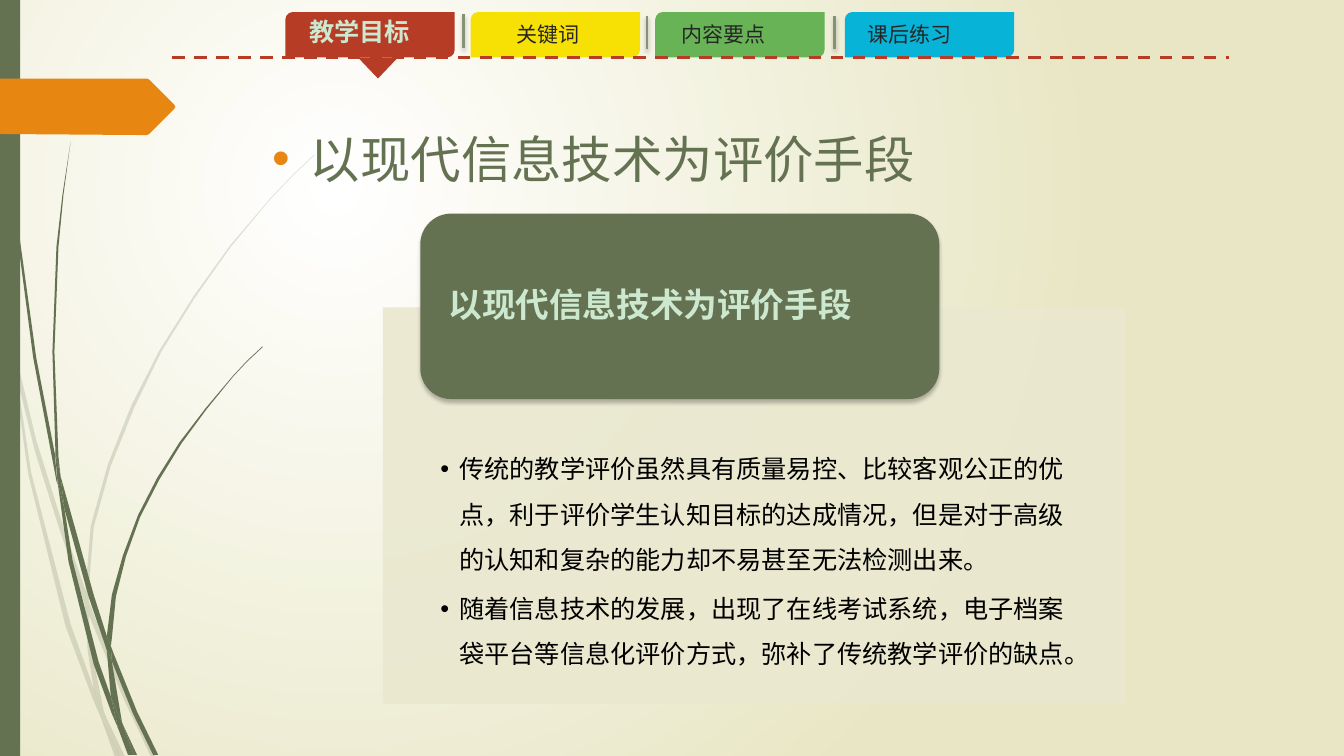
from dataclasses import dataclass

from lxml import etree
from pptx import Presentation
from pptx.dml.color import RGBColor
from pptx.enum import dml, lang, shapes, text
from pptx.oxml import ns
from pptx.util import Pt

OLIVE = RGBColor(0x64, 0x72, 0x52)
SAGE = RGBColor(0x84, 0x92, 0x76)
MINT = RGBColor(0xCC, 0xE8, 0xCF)
CREAM = RGBColor(0xEA, 0xE8, 0xCF)
SAND = RGBColor(0xE8, 0xE6, 0xC4)
WHITE = RGBColor(0xFF, 0xFF, 0xFF)
BLACK = RGBColor(0, 0, 0)
INK = RGBColor(0x26, 0x26, 0x26)
ORANGE = RGBColor(0xE7, 0x87, 0x12)
RED = RGBColor(0xB7, 0x3C, 0x26)
YELLOW = RGBColor(0xF7, 0xE0, 0x03)
GREEN = RGBColor(0x67, 0xB3, 0x55)
BLUE = RGBColor(0x07, 0xB4, 0xD7)
HEAD_FONT, BODY_FONT = "Noto Sans CJK SC", "TeX Gyre Adventor"
GRID = Pt(0.72)  # one unit of the outlines below
TOPIC = "以现代信息技术为评价手段"


@dataclass
class Tab:
    label: str
    fill: RGBColor
    left: float
    label_box: tuple[float, float, float, float]
    size: float = 15
    color: RGBColor = INK
    bold: bool = False


@dataclass
class Separator:
    x: float
    top: float
    bottom: float


TABS = [
    Tab("教学目标", RED, 203.8, (213.8, 7.9, 87.1, 28.8), 18, MINT, True),
    Tab("关键词", YELLOW, 336.2, (362.2, 11.5, 59.8, 25.2)),
    Tab("内容要点", GREEN, 468, (479.5, 11.5, 74.9, 25.2)),
    Tab("课后练习", BLUE, 603.4, (612.7, 11.5, 74.9, 25.2)),
]
SEPARATORS = [Separator(331.2, 10.1, 34.6), Separator(462.2, 11.5, 35.3),
              Separator(596.2, 11.5, 35.3)]
POINTS = [
    "传统的教学评价虽然具有质量易控、比较客观公正的优点，利于评价学生认知目标的达成情况，"
    "但是对于高级的认知和复杂的能力却不易甚至无法检测出来。",
    "随着信息技术的发展，出现了在线考试系统，电子档案袋平台等信息化评价方式，"
    "弥补了传统教学评价的缺点。",
]
PALE_GRASS = [
    [(11, 350), (9, 322), (0, 282), (0, 299), (10, 344)],
    [(58, 522), (84, 599), (85, 586), (62, 520), (36, 437), (14, 345), (17, 376), (35, 449)],
    [(92, 607), (88, 596), (88, 610), (123, 694), (150, 751), (155, 751), (127, 692)],
    [(119, 751), (124, 751), (105, 711)],
    [(93, 683), (70, 619), (31, 469), (17, 376), (11, 350), (28, 470), (65, 621), (92, 693),
     (101, 714), (99, 707)],
    [(84, 599), (87, 646), (93, 683), (96, 692), (105, 711), (103, 706), (91, 646), (88, 610),
     (88, 608)],
    [(88, 584), (93, 523), (110, 462), (133, 405), (160, 349), (193, 296), (229, 245),
     (268, 198), (290, 175), (312, 154), (312, 153), (289, 175), (268, 197), (228, 244),
     (192, 294), (158, 348), (130, 403), (107, 461), (90, 522), (85, 584), (85, 586), (88, 596)],
    [(101, 714), (114, 751), (119, 751)],
    [(88, 608), (88, 610), (88, 596), (85, 586), (84, 599)],
    [(96, 692), (93, 683), (99, 707), (101, 714), (119, 751), (105, 711)],
]
DARK_GRASS = [
    [(7, 110), (17, 233), (33, 355), (56, 477), (57, 481), (55, 457), (55, 453), (36, 355),
     (19, 232), (8, 109), (5, 48), (4, 0), (3, 0), (4, 48)],
    [(88, 592), (106, 645), (106, 633), (106, 631), (93, 590), (60, 472), (64, 505)],
    [(113, 649), (110, 641), (111, 656), (132, 708), (152, 749), (157, 749), (136, 706)],
    [(110, 691), (98, 657), (72, 556), (64, 505), (57, 477), (68, 557), (93, 659), (111, 708),
     (117, 722), (116, 717)],
    [(60, 472), (58, 453), (54, 349), (58, 245), (63, 193), (70, 141), (62, 193), (56, 245),
     (52, 349), (55, 449)],
    [(133, 749), (136, 749), (122, 719)],
    [(57, 477), (64, 505), (60, 472), (55, 449), (55, 453)],
    [(111, 633), (115, 592), (125, 552), (139, 513), (158, 476), (180, 440), (205, 406),
     (231, 374), (245, 359), (261, 344), (260, 344), (245, 358), (231, 373), (204, 405),
     (178, 439), (156, 474), (137, 511), (122, 551), (111, 590), (106, 631), (110, 641)],
    [(117, 722), (127, 749), (131, 749)],
    [(106, 645), (110, 691), (116, 706), (122, 719), (121, 716), (111, 656), (109, 651)],
    [(106, 645), (109, 651), (111, 656), (110, 641), (106, 631), (106, 633)],
    [(116, 706), (110, 691), (116, 717), (117, 722), (130, 749), (133, 749), (122, 719)],
]
PENNANT = [(173, 108), (148, 133), (146, 134), (136, 134), (0, 133), (0, 78), (146, 78),
           (148, 79), (173, 104), (174, 106)]


def add_xml(parent, tag: str, **attrs):
    return etree.SubElement(parent, ns.qn(tag), {k: str(v) for k, v in attrs.items()})


def paint(sp, color: RGBColor, opacity: int = 100) -> None:
    sp.shadow.inherit = False
    sp.fill.solid()
    sp.fill.fore_color.rgb = color
    sp.line.fill.background()
    if opacity < 100:
        clr = sp.element.spPr.find(".//" + ns.qn("a:srgbClr"))
        add_xml(clr, "a:alpha", val=opacity * 1000)


def add_soft_shadow(effects) -> None:
    shadow = add_xml(effects, "a:outerShdw", blurRad=Pt(3), dist=Pt(2), dir=5400000,
                     algn="ctr", rotWithShape=0)
    add_xml(add_xml(shadow, "a:srgbClr", val="000000"), "a:alpha", val=25000)


def add_outline(parent, points: list[tuple[int, int]], color: RGBColor, opacity: int = 100) -> None:
    builder = parent.build_freeform(*points[0], scale=GRID)
    builder.add_line_segments(points[1:], close=True)
    paint(builder.convert_to_shape(), color, opacity)


def add_block(kind, box: tuple[float, ...], color: RGBColor, opacity: int = 100):
    sp = s.shapes.add_shape(kind, *map(Pt, box))
    paint(sp, color, opacity)
    return sp


def add_rule(x1: float, y1: float, x2: float, y2: float, color: RGBColor, width: float):
    ln = s.shapes.add_connector(shapes.MSO_CONNECTOR.STRAIGHT, *map(Pt, (x1, y1, x2, y2)))
    ln.line.color.rgb = color
    ln.line.width = Pt(width)
    return ln, add_xml(ln.element.spPr, "a:effectLst")


def add_text_box(box: tuple[float, ...], margins: tuple[float, ...], wrap: bool = True):
    tf = s.shapes.add_textbox(*map(Pt, box)).text_frame
    tf.word_wrap = wrap
    tf.margin_left, tf.margin_top, tf.margin_right, tf.margin_bottom = map(Pt, margins)
    return tf


def add_run(p, words: str, size: float, color: RGBColor, font: str = HEAD_FONT,
            bold: bool = False) -> None:
    r = p.add_run()
    r.text = words
    r.font.size, r.font.name, r.font.bold = Pt(size), font, bold
    r.font.color.rgb = color
    r.font.language_id = lang.MSO_LANGUAGE_ID.SIMPLIFIED_CHINESE


def add_bullet(p, indent: float, color: RGBColor) -> None:
    pPr = p._p.get_or_add_pPr()
    pPr.set("marL", str(Pt(indent)))
    pPr.set("indent", str(-Pt(indent)))
    add_xml(add_xml(pPr, "a:buClr"), "a:srgbClr", val=color)
    add_xml(pPr, "a:buFont", typeface="Arial")
    add_xml(pPr, "a:buChar", char="•")


prs = Presentation()
prs.slide_width, prs.slide_height = Pt(960), Pt(540)
s = prs.slides.add_slide(prs.slide_layouts[5])

# Background: round glow towards the upper left
fill = s.background.fill
fill.gradient()
for stop, color, position in zip(fill.gradient_stops, (WHITE, SAND), (0, 1)):
    stop.color.rgb, stop.position = color, position
grad = s.element.find(".//" + ns.qn("a:gradFill"))
grad.remove(grad.find(ns.qn("a:lin")))
glow = add_xml(grad, "a:path", path="circle")
add_xml(glow, "a:fillToRect", l=50000, t=50000, r=100000, b=100000)

# Grass, side bar and pennant
for blades, opacity in ((PALE_GRASS, 20), (DARK_GRASS, 100)):
    grass = s.shapes.add_group_shape()
    for blade in blades:
        add_outline(grass.shapes, blade, OLIVE, opacity)
add_block(shapes.MSO_SHAPE.RECTANGLE, (0, 0, 14.4, 540), OLIVE)
add_outline(s.shapes, PENNANT, ORANGE)

# Navigation tabs
for tab in reversed(TABS):
    add_block(shapes.MSO_SHAPE.ROUND_2_DIAG_RECTANGLE, (tab.left, 8.6, 121, 32.4), tab.fill)
dashes, _ = add_rule(123.1, 41, 877.7, 41, RED, 2.25)
dashes.line.dash_style = dml.MSO_LINE.DASH
for tab in TABS:
    tf = add_text_box(tab.label_box, (7.2, 3.6, 7.2, 3.6), wrap=False)
    tf.auto_size = text.MSO_AUTO_SIZE.SHAPE_TO_FIT_TEXT
    add_run(tf.paragraphs[0], tab.label, tab.size, tab.color, bold=tab.bold)
for sep in SEPARATORS:
    _, effects = add_rule(sep.x, sep.top, sep.x, sep.bottom, SAGE, 1.75)
    add_soft_shadow(effects)
pointer = add_block(shapes.MSO_SHAPE.ISOSCELES_TRIANGLE, (255.6, 41, 28.8, 15.1), RED)
pointer.element.spPr.find(ns.qn("a:xfrm")).set("flipV", "1")

# Title, in front of the grass
title = s.shapes.title
title.element.getparent().append(title.element)
title.left, title.top, title.width, title.height = map(Pt, (187.2, 87.8, 526.3, 63.4))
tf = title.text_frame
tf.vertical_anchor, tf.auto_size = text.MSO_ANCHOR.TOP, text.MSO_AUTO_SIZE.NONE
p = tf.paragraphs[0]
p.alignment, p.space_before = text.PP_ALIGN.LEFT, Pt(10)
add_bullet(p, 27, ORANGE)
add_run(p, TOPIC, 36, OLIVE)

# Panel with the two points
panel_box = (273.6, 219.6, 529.9, 283)
add_block(shapes.MSO_SHAPE.RECTANGLE, panel_box, CREAM, 90)
tf = add_text_box(panel_box, (41, 93.6, 41, 10.1))
for i, words in enumerate(POINTS):
    p = tf.add_paragraph() if i else tf.paragraphs[0]
    p.line_spacing, p.space_after = 1.5, Pt(2.7)
    add_bullet(p, 13.5, BLACK)
    add_run(p, words, 18, BLACK, BODY_FONT)

# Heading card
card = add_block(shapes.MSO_SHAPE.ROUNDED_RECTANGLE, (300.2, 152.6, 370.8, 132.5), OLIVE)
add_soft_shadow(card.element.spPr.find(ns.qn("a:effectLst")))
tf = add_text_box((306.7, 159.1, 357.8, 119.5), (13.7, 0, 13.7, 0))
tf.vertical_anchor = text.MSO_ANCHOR.MIDDLE
p = tf.paragraphs[0]
p.line_spacing, p.space_after = 0.9, Pt(8.4)
add_run(p, TOPIC, 24, MINT, bold=True)

prs.save("out.pptx")
